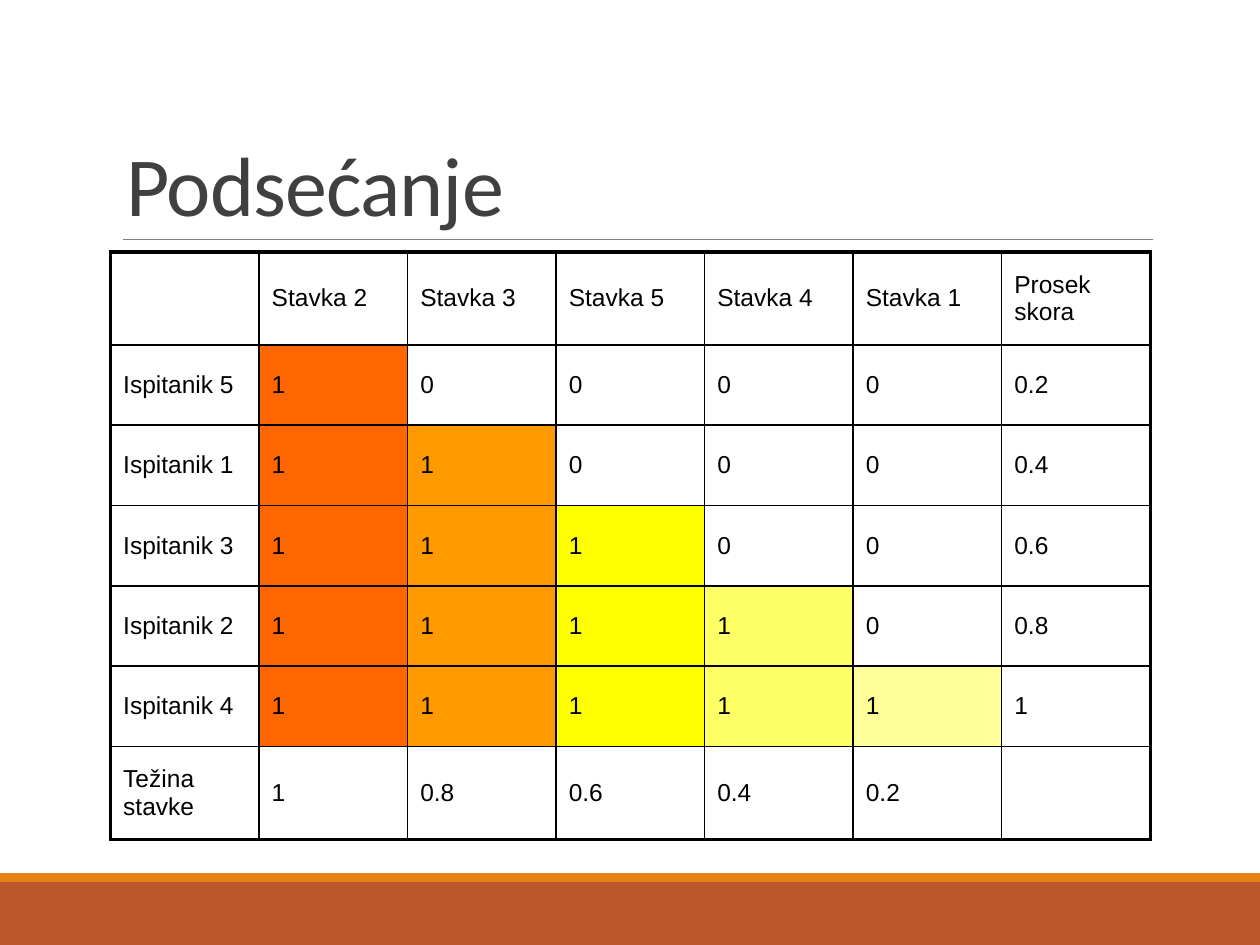
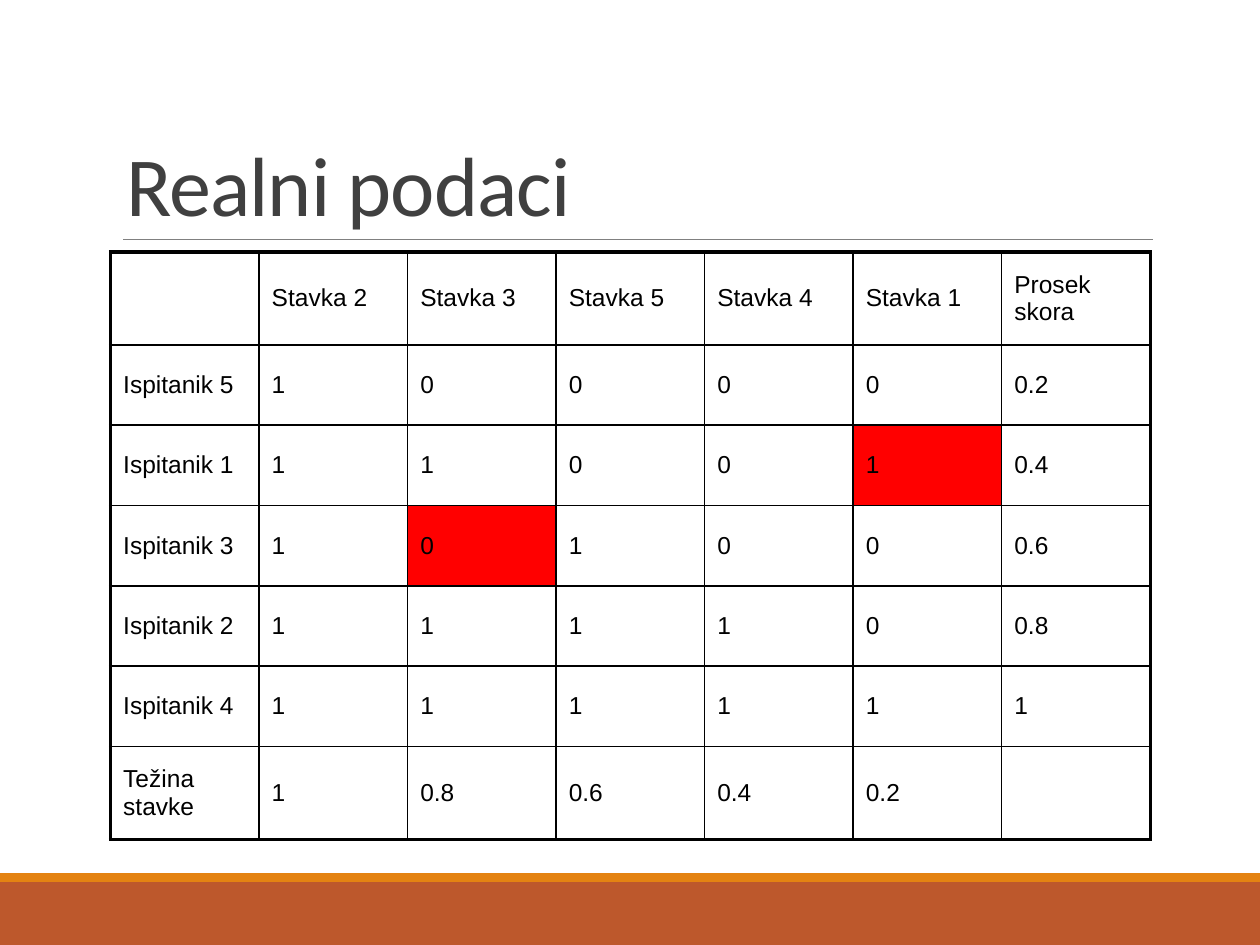
from dataclasses import dataclass

from lxml import etree
from pptx import Presentation
from pptx.dml.color import RGBColor
from pptx.enum.shapes import MSO_CONNECTOR, MSO_SHAPE
from pptx.enum.text import MSO_ANCHOR, MSO_AUTO_SIZE, PP_ALIGN
from pptx.oxml.ns import qn
from pptx.slide import Slide
from pptx.table import _Cell
from pptx.util import Cm, Pt

RECT = MSO_SHAPE.RECTANGLE
STRAIGHT = MSO_CONNECTOR.STRAIGHT
MIDDLE = MSO_ANCHOR.MIDDLE
BOTTOM = MSO_ANCHOR.BOTTOM
LEFT = PP_ALIGN.LEFT
NO_FIT = MSO_AUTO_SIZE.NONE

RUST = RGBColor(0xBD, 0x58, 0x2C)
AMBER = RGBColor(0xE4, 0x83, 0x12)
GREY = RGBColor(0x80, 0x80, 0x80)
DARK = RGBColor(0x40, 0x40, 0x40)
BLACK = RGBColor(0x00, 0x00, 0x00)
RED = RGBColor(0xFF, 0x00, 0x00)
RAMP = [
    RGBColor(0xFF, 0x66, 0x00),
    RGBColor(0xFF, 0x99, 0x00),
    RGBColor(0xFF, 0xFF, 0x00),
    RGBColor(0xFF, 0xFF, 0x66),
    RGBColor(0xFF, 0xFF, 0x99),
]

WIDTH, HEIGHT = Cm(25.4), Cm(19.05)
ROWS = [Cm(1.87)] + [Cm(1.62)] * 5 + [Cm(1.87)]
THIN, THICK = Pt(1), Pt(2.25)

SCORES = [
    ["", "Stavka 2", "Stavka 3", "Stavka 5", "Stavka 4", "Stavka 1", "Prosek skora"],
    ["Ispitanik 5", "1", "0", "0", "0", "0", "0.2"],
    ["Ispitanik 1", "1", "1", "0", "0", "0", "0.4"],
    ["Ispitanik 3", "1", "1", "1", "0", "0", "0.6"],
    ["Ispitanik 2", "1", "1", "1", "1", "0", "0.8"],
    ["Ispitanik 4", "1", "1", "1", "1", "1", "1"],
    ["Težina stavke", "1", "0.8", "0.6", "0.4", "0.2", ""],
]

Spot = tuple[int, int]


@dataclass
class Band:
    top: Cm
    height: Cm
    color: RGBColor


@dataclass
class Page:
    title: str
    swaps: dict[Spot, str]
    fills: dict[Spot, RGBColor]


BANDS = [Band(Cm(17.78), Cm(1.27), RUST), Band(Cm(17.6), Cm(0.18), AMBER)]

STAIRS = {
    (row, col): RAMP[col - 1] for row in range(1, 6) for col in range(1, row + 1)
}
ERRORS = {(2, 5): "1", (3, 2): "0"}
PAGES = [
    Page("Podsećanje", {}, STAIRS),
    Page("Realni podaci", ERRORS, dict.fromkeys(ERRORS, RED)),
]


def draw_frame(slide: Slide) -> None:
    for band in BANDS:
        shape = slide.shapes.add_shape(RECT, 0, band.top, WIDTH, band.height)
        shape.shadow.inherit = False
        shape.fill.solid()
        shape.fill.fore_color.rgb = band.color
        shape.line.fill.background()
    rule = slide.shapes.add_connector(
        STRAIGHT, Cm(2.48), Cm(4.83), Cm(23.24), Cm(4.83)
    )
    rule.line.color.rgb = GREY
    rule.line.width = Pt(0.5)
    etree.SubElement(rule._element.spPr, qn("a:effectLst"))


def draw_title(slide: Slide, text: str) -> None:
    title = slide.shapes.title
    title.left, title.top = Cm(2.29), Cm(0.79)
    title.width, title.height = Cm(20.96), Cm(4.04)
    frame = title.text_frame
    frame.text = text
    frame.word_wrap = True
    frame.auto_size = NO_FIT
    frame.vertical_anchor = BOTTOM
    para = frame.paragraphs[0]
    para.alignment = LEFT
    para.line_spacing = 0.85
    run = para.runs[0]
    run.font.name = "Calibri"
    run.font.size = Pt(48)
    run.font.color.rgb = DARK
    run.font._element.set("spc", "-50")


def set_edge(cell: _Cell, side: str, width: Pt) -> None:
    props = cell._tc.get_or_add_tcPr()
    line = etree.SubElement(props, qn(f"a:ln{side}"), w=str(int(width)))
    fill = etree.SubElement(line, qn("a:solidFill"))
    etree.SubElement(fill, qn("a:srgbClr"), val=str(BLACK))


def draw_cell(cell: _Cell, text: str, fill: RGBColor | None) -> None:
    cell.text = text
    cell.vertical_anchor = MIDDLE
    if fill is None:
        cell.fill.background()
    else:
        cell.fill.solid()
        cell.fill.fore_color.rgb = fill
    para = cell.text_frame.paragraphs[0]
    para.space_before = Pt(2.8)
    para.font.size = Pt(14)
    for run in para.runs:
        run.font.name = "Arial"
        run.font.size = Pt(14)
        run.font.bold = False
        run.font.color.rgb = BLACK


def draw_table(slide: Slide, page: Page) -> None:
    count, span = len(SCORES), len(SCORES[0])
    table = slide.shapes.add_table(
        count, span, Cm(2.23), Cm(5.08), Cm(20.96), sum(ROWS)
    ).table
    table.first_row = table.horz_banding = False
    for row, height in zip(table.rows, ROWS):
        row.height = height
    for row, texts in enumerate(SCORES):
        for col, text in enumerate(texts):
            cell = table.cell(row, col)
            outer = {
                "L": col == 0,
                "R": col == span - 1,
                "T": row == 0,
                "B": row == count - 1,
            }
            for side, edge in outer.items():
                set_edge(cell, side, THICK if edge else THIN)
            spot = (row, col)
            draw_cell(cell, page.swaps.get(spot, text), page.fills.get(spot))


def main() -> None:
    deck = Presentation()
    deck.slide_width, deck.slide_height = WIDTH, HEIGHT
    for page in PAGES:
        slide = deck.slides.add_slide(deck.slide_layouts[5])
        draw_frame(slide)
        draw_title(slide, page.title)
        draw_table(slide, page)
    deck.save("out.pptx")


if __name__ == "__main__":
    main()
